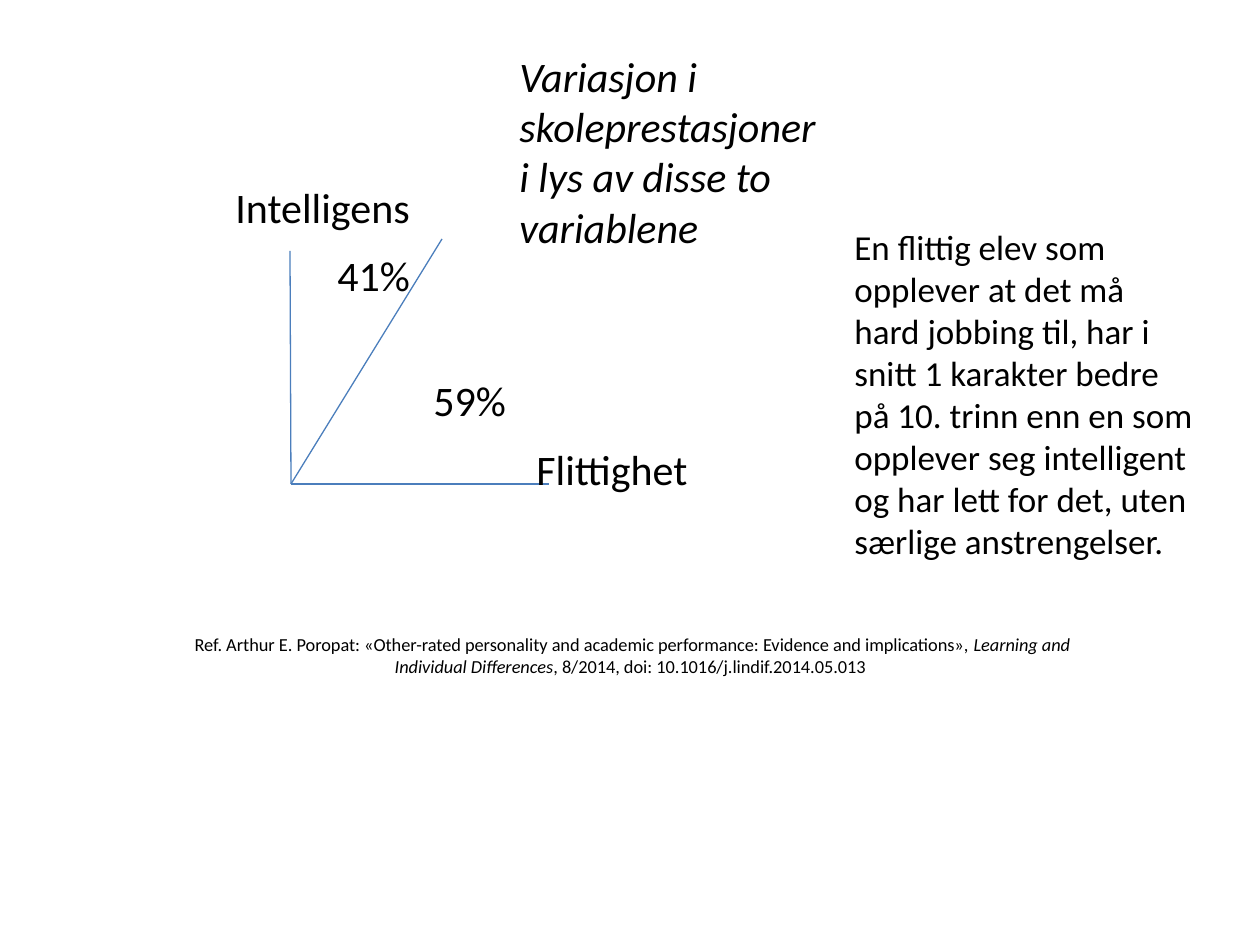
from typing import NamedTuple

from lxml import etree
from pptx import Presentation
from pptx.dml.color import RGBColor
from pptx.enum.shapes import MSO_CONNECTOR
from pptx.enum.text import MSO_ANCHOR, MSO_AUTO_SIZE, PP_ALIGN
from pptx.oxml.ns import qn
from pptx.util import Emu, Pt

STRAIGHT = MSO_CONNECTOR.STRAIGHT
MIDDLE = MSO_ANCHOR.MIDDLE
CENTER = PP_ALIGN.CENTER
NO_FIT = MSO_AUTO_SIZE.NONE
BLACK = RGBColor(0x00, 0x00, 0x00)
BLUE = RGBColor(0x4B, 0x7E, 0xBC)
FONT = "Calibri"
SCALE = 914400 / 126


class Point(NamedTuple):
    x: int
    y: int


class Label(NamedTuple):
    text: str
    left: int
    top: int
    width: int
    height: int = 63
    size: int = 24
    italic: bool = False


ORIGIN = Point(291, 484)
TIPS = [Point(290, 251), Point(549, 484), Point(442, 239)]

LABELS = [
    Label("Intelligens", 223, 175, 244),
    Label("Flittighet", 524, 437, 228),
    Label("59%", 421, 368, 131),
    Label("41%", 325, 243, 116),
    Label("Variasjon i skoleprestasjoner i lys av disse to variablene",
          507, 44, 335, 217, italic=True),
    Label("En flittig elev som opplever at det må hard jobbing til, "
          "har i snitt 1 karakter bedre på 10. trinn enn en som opplever "
          "seg intelligent og har lett for det, uten særlige anstrengelser.",
          842, 219, 365, 352, size=20),
]

SOURCE = [
    ("Ref. Arthur E. Poropat: «Other-rated personality and academic "
     "performance: Evidence and implications», ", False),
    ("Learning and Individual Differences", True),
    (", 8/2014, doi: 10.1016/j.lindif.2014.05.013 ", False),
]


def px(count: int) -> Emu:
    return Emu(round(count * SCALE))


def style(run, size: float, italic: bool) -> None:
    font = run.font
    font.name = FONT
    font.size = Pt(size)
    font.italic = italic
    font.color.rgb = BLACK


def draw_label(slide, label: Label) -> None:
    box = slide.shapes.add_textbox(px(label.left), px(label.top),
                                   px(label.width), px(label.height))
    frame = box.text_frame
    frame.word_wrap = True
    frame.text = label.text
    style(frame.paragraphs[0].runs[0], label.size, label.italic)


def draw_line(slide, start: Point, end: Point) -> None:
    line = slide.shapes.add_connector(STRAIGHT, px(start.x), px(start.y),
                                      px(end.x), px(end.y))
    line.line.color.rgb = BLUE
    line.line.width = Pt(0.75)
    etree.SubElement(line._element.spPr, qn("a:effectLst"))


def fill_title(slide) -> None:
    """Set the source reference in the title placeholder."""
    title = slide.shapes.title
    title.left, title.top = px(160), px(532)
    title.width, title.height = px(945), px(247)
    frame = title.text_frame
    frame.word_wrap = True
    frame.auto_size = NO_FIT
    frame.vertical_anchor = MIDDLE
    para = frame.paragraphs[0]
    para.alignment = CENTER
    for text, italic in SOURCE:
        run = para.add_run()
        run.text = text
        style(run, 10.5, italic)


def main() -> None:
    deck = Presentation()
    deck.slide_width, deck.slide_height = px(1260), px(945)
    slide = deck.slides.add_slide(deck.slide_layouts[5])
    fill_title(slide)
    for tip in TIPS:
        draw_line(slide, ORIGIN, tip)
    for label in LABELS:
        draw_label(slide, label)
    deck.save("out.pptx")


if __name__ == "__main__":
    main()
